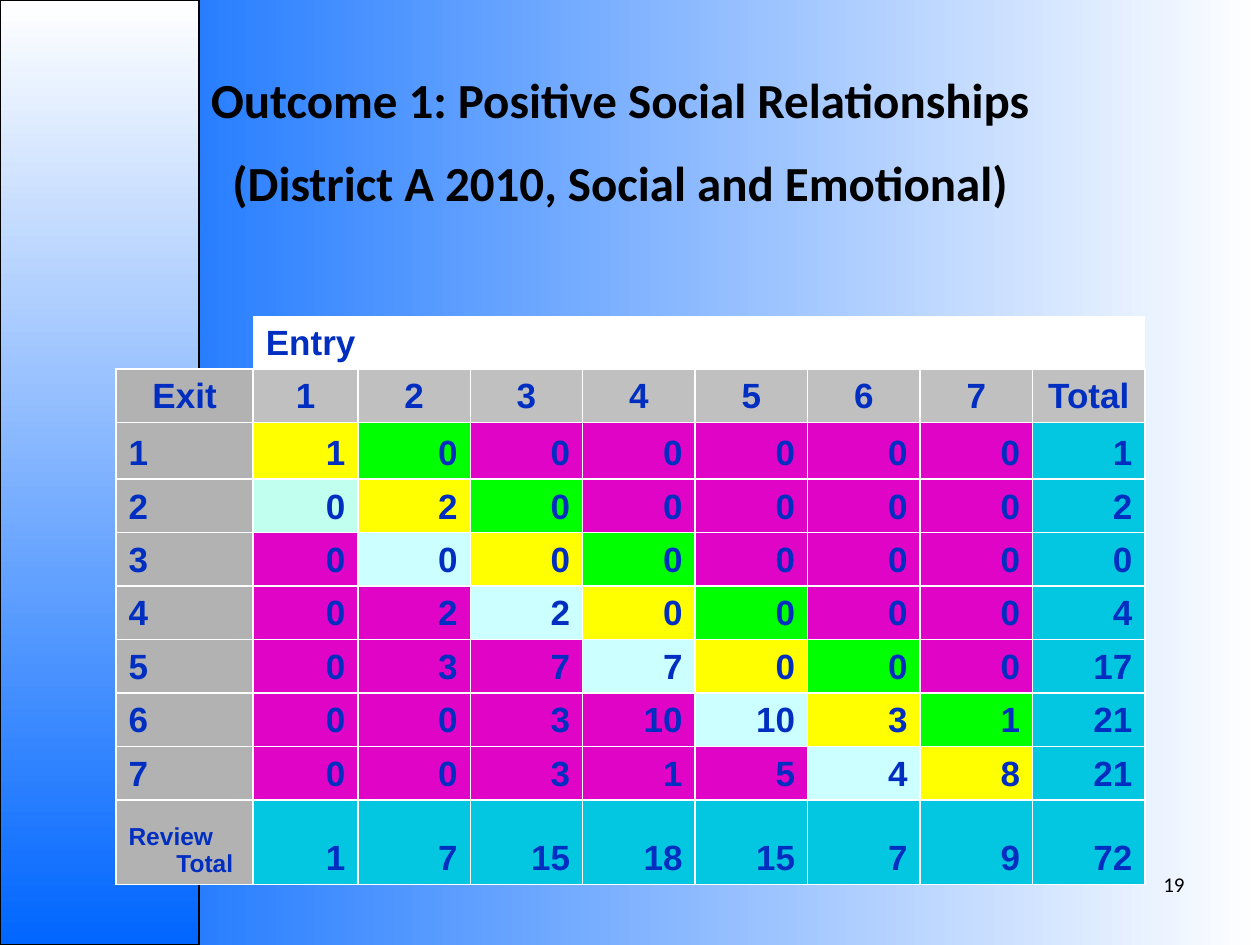
import lxml.etree
import pptx
import pptx.dml.color
import pptx.enum.shapes
import pptx.enum.text
import pptx.oxml.ns
import pptx.util

Inches = pptx.util.Inches
Pt = pptx.util.Pt
RGBColor = pptx.dml.color.RGBColor
ALIGN = pptx.enum.text.PP_ALIGN
ANCHOR = pptx.enum.text.MSO_ANCHOR
qn = pptx.oxml.ns.qn

BLACK = RGBColor(0x00, 0x00, 0x00)
WHITE = RGBColor(0xFF, 0xFF, 0xFF)
BRIGHT_BLUE = RGBColor(0x00, 0x66, 0xFF)
TEXT_BLUE = RGBColor(0x00, 0x2E, 0xC0)
EXIT_GREY = RGBColor(0xB2, 0xB2, 0xB2)
ENTRY_GREY = RGBColor(0xC0, 0xC0, 0xC0)
TOTAL_CYAN = RGBColor(0x03, 0xC7, 0xE1)
MAGENTA = RGBColor(0xE0, 0x04, 0xC6)
YELLOW = RGBColor(0xFF, 0xFF, 0x00)
GREEN = RGBColor(0x00, 0xFF, 0x00)
PALE_CYAN = RGBColor(0xCC, 0xFF, 0xFF)
PALE_MINT = RGBColor(0xC1, 0xFF, 0xEF)

NO_STYLE = "{2D5ABB26-0587-4C30-8999-92F81FD0307C}"
TITLE_LINES = ["Outcome 1: Positive Social Relationships",
               "(District A 2010, Social and Emotional)"]
HEADINGS = ["Exit", 1, 2, 3, 4, 5, 6, 7, "Total"]
RATINGS = [
    [1, 1, 0, 0, 0, 0, 0, 0, 1],
    [2, 0, 2, 0, 0, 0, 0, 0, 2],
    [3, 0, 0, 0, 0, 0, 0, 0, 0],
    [4, 0, 2, 2, 0, 0, 0, 0, 4],
    [5, 0, 3, 7, 7, 0, 0, 0, 17],
    [6, 0, 0, 3, 10, 10, 3, 1, 21],
    [7, 0, 0, 3, 1, 5, 4, 8, 21],
]
REVIEW_TOTALS = ["Review Total", 1, 7, 15, 18, 15, 7, 9, 72]
TABLE_WIDTH, TABLE_HEIGHT = 8.17, 4.94
EXIT_WIDTH, FIRST_ENTRY_WIDTH = 1.09, 0.83
FIRST_RATING_HEIGHT, REVIEW_HEIGHT = 0.45, 0.67


def set_font(paragraph, name, size, color, bold=False):
    """Set the font of a whole paragraph."""
    paragraph.font.name = name
    paragraph.font.size = Pt(size)
    paragraph.font.bold = bold
    paragraph.font.color.rgb = color


def set_gradient(fill, start, end, angle):
    """Fill with a two-colour linear gradient."""
    fill.gradient()
    fill.gradient_angle = angle
    for stop, color in zip(fill.gradient_stops, (start, end)):
        stop.color.rgb = color


def add_side_panel(slide):
    """Add the gradient panel along the left edge."""
    panel = slide.shapes.add_shape(pptx.enum.shapes.MSO_SHAPE.RECTANGLE,
                                   0, 0, Inches(1.58), Inches(7.5))
    panel.shadow.inherit = False
    set_gradient(panel.fill, WHITE, BRIGHT_BLUE, 270)
    panel.line.color.rgb = BLACK
    panel.line.width = Pt(0.75)


def add_title(slide):
    """Place the two-line title in front of the panel."""
    title = slide.shapes.title
    title.left, title.top = Inches(0.42), Inches(0.5)
    title.width, title.height = Inches(9), Inches(1.28)
    frame = title.text_frame
    frame.text = "\n".join(TITLE_LINES)
    frame.vertical_anchor = ANCHOR.TOP
    frame.auto_size = pptx.enum.text.MSO_AUTO_SIZE.SHAPE_TO_FIT_TEXT
    for paragraph in frame.paragraphs:
        paragraph.alignment = ALIGN.CENTER
        set_font(paragraph, "Calibri", 28, BLACK, True)
    frame.paragraphs[1].space_before = Pt(14)
    slide.shapes._spTree.append(title._element)


def add_page_number(slide):
    """Add the page number at the lower right."""
    number = slide.shapes.add_textbox(Inches(8), Inches(6.67), Inches(1.5), Inches(0.5))
    frame = number.text_frame
    frame.word_wrap = True
    frame.vertical_anchor = ANCHOR.BOTTOM
    frame.text = "19"
    frame.paragraphs[0].alignment = ALIGN.RIGHT
    set_font(frame.paragraphs[0], "Calibri", 12, BLACK)


def set_borders(cell, sides):
    """Draw thin white borders on the given sides of a cell."""
    properties = cell._tc.get_or_add_tcPr()
    for side in sides:
        line = lxml.etree.SubElement(properties, qn(f"a:ln{side}"), w=str(Pt(1)))
        solid = lxml.etree.SubElement(line, qn("a:solidFill"))
        lxml.etree.SubElement(solid, qn("a:srgbClr"), val=str(WHITE))


def fill_cell(cell, text, color, alignment, size=20):
    """Write one cell with its fill and hanging indent."""
    cell.fill.solid()
    cell.fill.fore_color.rgb = color
    cell.vertical_anchor = ANCHOR.BOTTOM
    cell.text = str(text)
    paragraph = cell.text_frame.paragraphs[0]
    paragraph.alignment = alignment
    indent = paragraph._p.get_or_add_pPr()
    indent.set("marL", str(Inches(0.38)))
    indent.set("indent", str(-Inches(0.38)))
    set_font(paragraph, "Arial", size, TEXT_BLUE, True)


def rating_color(exit_rating, entry_rating):
    """Choose the fill by the distance between exit and entry ratings."""
    if (exit_rating, entry_rating) == (2, 1):
        return PALE_MINT
    by_gain = {-1: GREEN, 0: YELLOW, 1: PALE_CYAN}
    return by_gain.get(exit_rating - entry_rating, MAGENTA)


def size_grid(table):
    """Set column widths and row heights."""
    column_count, row_count = len(table.columns), len(table.rows)
    entry_width = (TABLE_WIDTH - EXIT_WIDTH - FIRST_ENTRY_WIDTH) / (column_count - 2)
    row_height = (TABLE_HEIGHT - FIRST_RATING_HEIGHT - REVIEW_HEIGHT) / (row_count - 2)
    widths = {0: EXIT_WIDTH, 1: FIRST_ENTRY_WIDTH}
    heights = {3: FIRST_RATING_HEIGHT, row_count - 1: REVIEW_HEIGHT}
    for index, column in enumerate(table.columns):
        column.width = Inches(widths.get(index, entry_width))
    for index, row in enumerate(table.rows):
        row.height = Inches(heights.get(index, row_height))


def add_crosstab(slide):
    """Add the table of exit ratings against entry ratings."""
    row_count, column_count = len(RATINGS) + 4, len(HEADINGS)
    frame = slide.shapes.add_table(row_count, column_count, Inches(0.92), Inches(2.08),
                                   Inches(TABLE_WIDTH), Inches(TABLE_HEIGHT))
    table = frame.table
    table.first_row = table.horz_banding = False
    table._tbl.tblPr.find(qn("a:tableStyleId")).text = NO_STYLE
    size_grid(table)
    table.cell(0, 0).merge(table.cell(0, 1))
    table.cell(1, 1).merge(table.cell(1, 2))

    for row in range(row_count):
        sides = "" if row == 0 else "B" if row == 1 else "LRTB"
        for column in range(column_count):
            set_borders(table.cell(row, column), sides)
    for column in range(column_count):
        table.cell(0, column).fill.background()
    table.cell(1, 0).fill.background()
    fill_cell(table.cell(1, 1), "Entry", WHITE, ALIGN.LEFT)
    for column in range(2, column_count):
        table.cell(1, column).fill.solid()
        table.cell(1, column).fill.fore_color.rgb = WHITE

    for column, heading in enumerate(HEADINGS):
        color = EXIT_GREY if column == 0 else ENTRY_GREY
        fill_cell(table.cell(2, column), heading, color, ALIGN.CENTER)
    last = column_count - 1
    for exit_rating, counts in enumerate(RATINGS, 1):
        row = exit_rating + 2
        fill_cell(table.cell(row, 0), counts[0], EXIT_GREY, ALIGN.LEFT)
        for entry_rating in range(1, last):
            fill_cell(table.cell(row, entry_rating), counts[entry_rating],
                      rating_color(exit_rating, entry_rating), ALIGN.RIGHT)
        fill_cell(table.cell(row, last), counts[last], TOTAL_CYAN, ALIGN.RIGHT)
    fill_cell(table.cell(row_count - 1, 0), REVIEW_TOTALS[0], EXIT_GREY, ALIGN.LEFT, 14)
    for column in range(1, column_count):
        fill_cell(table.cell(row_count - 1, column), REVIEW_TOTALS[column],
                  TOTAL_CYAN, ALIGN.RIGHT)


def main():
    """Build and save the slide."""
    deck = pptx.Presentation()
    deck.slide_width, deck.slide_height = Inches(10), Inches(7.5)
    slide = deck.slides.add_slide(deck.slide_layouts[5])
    set_gradient(slide.background.fill, BRIGHT_BLUE, WHITE, 0)
    add_side_panel(slide)
    add_crosstab(slide)
    add_title(slide)
    add_page_number(slide)
    deck.save("out.pptx")


if __name__ == "__main__":
    main()
